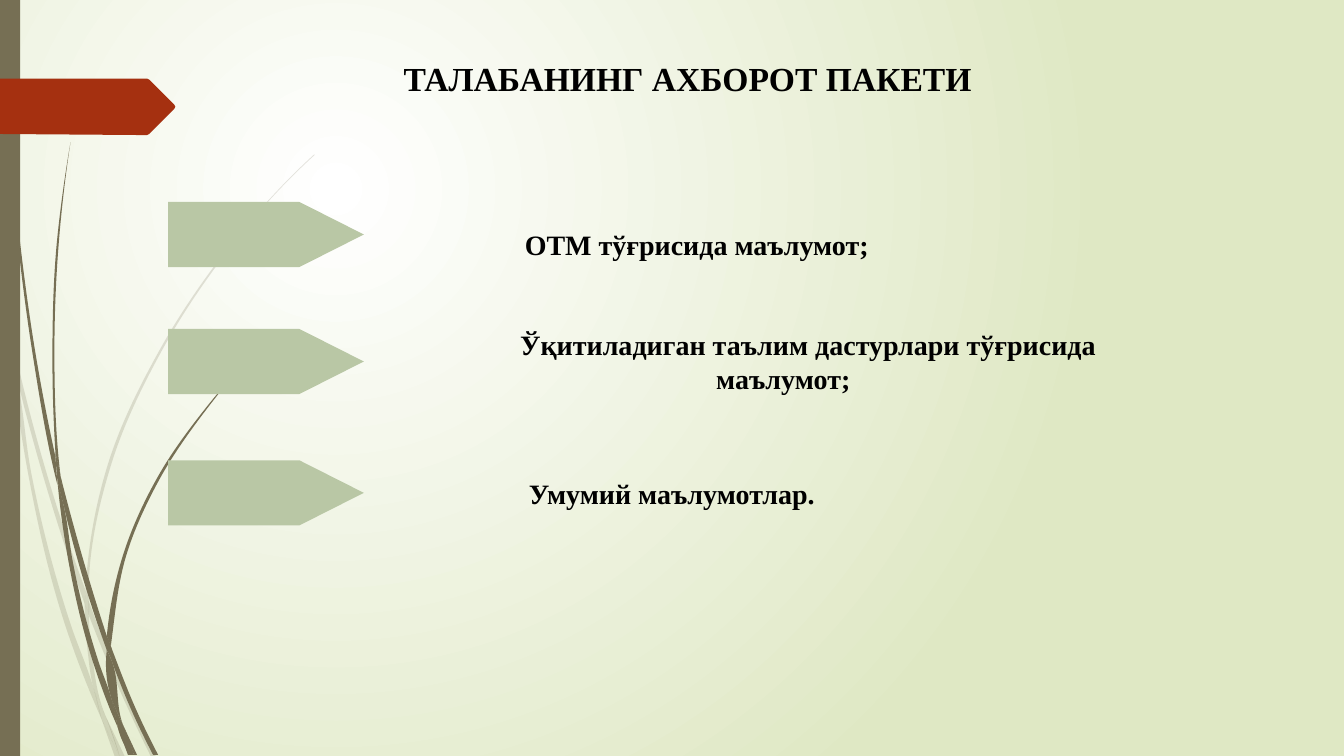
"""Build the slide about the student's information package."""
from math import dist

from lxml import etree
from pptx import Presentation
from pptx.dml.color import RGBColor
from pptx.enum.shapes import MSO_SHAPE
from pptx.enum.text import MSO_AUTO_SIZE, PP_ALIGN
from pptx.oxml.ns import qn
from pptx.util import Cm, Pt

RECTANGLE = MSO_SHAPE.RECTANGLE
ARROW = MSO_SHAPE.PENTAGON
CENTER = PP_ALIGN.CENTER
GROW = MSO_AUTO_SIZE.SHAPE_TO_FIT_TEXT

STEM, BANNER, SAGE = "766F54", "A53010", "B9C7A5"
BLACK, WHITE, PALE_GREEN = "000000", "FFFFFF", "DFE8C4"
FONT = "Times New Roman"
GRID = 0.0254

TEXTS = [
    ("ТАЛАБАНИНГ АХБОРОТ ПАКЕТИ ", (8.33, 1.34, 18.21, 1.27), {"size": 24}),
    ("ОТМ тўғрисида маълумот;", (11.68, 5.49, 10.52, 1.24),
     {"indent": 1.25, "spacing": 1.15, "wrap": False}),
    ("Ўқитиладиган таълим дастурлари тўғрисида маълумот;",
     (10.74, 8.13, 18, 1.96), {"indent": 1.25}),
    ("Умумий маълумотлар.", (9.93, 11.82, 14, 1.17),
     {"spacing": 1.07, "after": 8}),
]
ARROW_LEFT, ARROW_WIDTH, ARROW_HEIGHT = 4.24, 4.93, 1.64
ARROW_TOPS = [5.09, 8.29, 11.6]

FAINT_BLADES = [
    ([(0, 282), (9, 322), (11, 350)], [(10, 344), (0, 299)]),
    ([(14, 345), (62, 520), (85, 586)], [(84, 599), (58, 522), (17, 376)]),
    ([(88, 596), (92, 607), (127, 692), (155, 751)],
     [(150, 751), (123, 694), (88, 610)]),
    ([(105, 711), (124, 751)], [(119, 751)]),
    ([(11, 350), (17, 376), (31, 469), (70, 619), (93, 683), (101, 714)],
     [(92, 693), (65, 621), (28, 470), (11, 350)]),
    ([(84, 599), (88, 608)], [(88, 610), (91, 646), (103, 706), (105, 711)],
     [(96, 692), (93, 683), (87, 646), (84, 599)]),
    ([(312, 153), (289, 175), (268, 197), (228, 244), (158, 348), (107, 461),
      (85, 584)],
     [(88, 596), (88, 584), (110, 462), (160, 349), (229, 245), (268, 198),
      (290, 175), (312, 154)]),
    ([(101, 714), (119, 751)], [(114, 751)]),
    ([(85, 586), (88, 596), (88, 610)], [(88, 608), (84, 599)]),
    ([(93, 683), (96, 692), (105, 711), (119, 751)], [(101, 714), (99, 707)]),
]
DARK_BLADES = [
    ([(4, 0), (5, 48), (8, 109), (19, 232), (36, 355), (55, 453)],
     [(57, 481), (56, 477), (33, 355), (17, 233), (7, 110), (4, 48), (3, 0)]),
    ([(60, 472), (93, 590), (106, 631)], [(106, 645), (88, 592), (64, 505)]),
    ([(110, 641), (113, 649), (136, 706), (157, 749)],
     [(152, 749), (132, 708), (111, 656)]),
    ([(57, 477), (64, 505), (72, 556), (98, 657), (110, 691), (117, 722)],
     [(111, 708), (93, 659), (68, 557), (57, 477)]),
    ([(70, 141), (63, 193), (58, 245), (54, 349), (58, 453), (60, 472)],
     [(55, 449), (52, 349), (56, 245), (62, 193), (70, 141)]),
    ([(122, 719), (136, 749)], [(133, 749)]),
    ([(55, 449), (60, 472), (64, 505)], [(57, 477), (55, 453)]),
    ([(260, 344), (245, 358), (231, 373), (204, 405), (156, 474), (122, 551),
      (106, 631)],
     [(110, 641), (111, 633), (125, 552), (158, 476), (205, 406), (231, 374),
      (245, 359), (261, 344)]),
    ([(117, 722), (131, 749)], [(127, 749)]),
    ([(106, 645), (111, 656), (121, 716), (122, 719)],
     [(116, 706), (110, 691), (106, 645)]),
    ([(106, 631), (110, 641), (111, 656)], [(109, 651), (106, 645)]),
    ([(110, 691), (116, 706), (122, 719), (133, 749)],
     [(130, 749), (117, 722), (116, 717)]),
]
BANNER_CORNERS = [(0, 78), (146, 78), (148, 79), (173, 104), (174, 106),
                  (173, 108), (148, 133), (146, 134), (136, 134), (0, 133)]


def set_color(fill, color, alpha=None):
    """Make a fill solid in a hex colour, with an optional opacity percent."""
    fill.solid()
    fill.fore_color.rgb = RGBColor.from_string(color)
    if alpha is not None:
        element = fill._xPr.find(".//" + qn("a:srgbClr"))
        etree.SubElement(element, qn("a:alpha"), val=str(alpha * 1000))


def finish(shape, color, alpha=None):
    """Give a shape its fill and take away its line and shadow."""
    set_color(shape.fill, color, alpha)
    shape.line.fill.background()
    shape.shadow.inherit = False


def edge_handles(knots):
    """Return None for the first knot, then two curve handles per segment."""
    if len(knots) < 3:
        return [None] * len(knots)
    lengths = [dist(a, b) for a, b in zip(knots, knots[1:])]
    units = [((b[0] - a[0]) / length, (b[1] - a[1]) / length)
             for a, b, length in zip(knots, knots[1:], lengths)]
    tangents = []
    for u, v, m, n in zip(units, units[1:], lengths, lengths[1:]):
        tangents.append([(p * n + q * m) / (m + n) for p, q in zip(u, v)])
    first, last = [[2 * p - q for p, q in zip(unit, tangent)]
                   for unit, tangent in ((units[0], tangents[0]),
                                         (units[-1], tangents[-1]))]
    tangents = [first, *tangents, last]
    handles = [None]
    for i, length in enumerate(lengths):
        handles.append([
            [p + t * length / 3 for p, t in zip(knots[i], tangents[i])],
            [p - t * length / 3 for p, t in zip(knots[i + 1], tangents[i + 1])],
        ])
    return handles


def add_outline(slide, edges, color, alpha=None):
    """Draw a closed outline made of smooth edges."""
    points = [(Cm(x * GRID), Cm(y * GRID)) for edge in edges for x, y in edge]
    handles = [pair for edge in edges for pair in edge_handles(edge)]
    builder = slide.shapes.build_freeform(*points[0])
    builder.add_line_segments(points[1:], close=True)
    shape = builder.convert_to_shape()
    segments = list(shape._element.iter(qn("a:lnTo")))
    for segment, pair in zip(segments, handles[1:]):
        if pair:
            segment.tag = qn("a:cubicBezTo")
            for index, (x, y) in enumerate(pair):
                point = etree.Element(qn("a:pt"), x=str(Cm(x * GRID) - shape.left),
                                      y=str(Cm(y * GRID) - shape.top))
                segment.insert(index, point)
    finish(shape, color, alpha)


def add_preset(slide, kind, box, color):
    """Draw a preset shape and return it."""
    shape = slide.shapes.add_shape(kind, *map(Cm, box))
    finish(shape, color)
    return shape


def add_text(slide, text, box, size=20, indent=0, spacing=None, after=None,
             wrap=True):
    """Add a centred bold text box."""
    frame = slide.shapes.add_textbox(*map(Cm, box)).text_frame
    frame.word_wrap = wrap
    frame.auto_size = GROW
    paragraph = frame.paragraphs[0]
    paragraph.alignment = CENTER
    if indent:
        paragraph._p.get_or_add_pPr().set("indent", str(Cm(indent)))
    if spacing:
        paragraph.line_spacing = spacing
    if after:
        paragraph.space_after = Pt(after)
    run = paragraph.add_run()
    run.text = text
    run.font.name, run.font.size, run.font.bold = FONT, Pt(size), True
    set_color(run.font.fill, BLACK)


def set_background(slide):
    """Fill the background with a circular gradient."""
    fill = slide.background.fill
    fill.gradient()
    for stop, color, position in zip(fill.gradient_stops,
                                     (WHITE, PALE_GREEN), (0, 1)):
        stop.color.rgb = RGBColor.from_string(color)
        stop.position = position
    gradient = next(slide.element.iter(qn("a:gradFill")))
    gradient.remove(gradient.find(qn("a:lin")))
    circle = etree.SubElement(gradient, qn("a:path"), path="circle")
    etree.SubElement(circle, qn("a:fillToRect"),
                     l="50000", t="50000", r="100000", b="100000")


def main():
    """Build and save the presentation."""
    presentation = Presentation()
    presentation.slide_width, presentation.slide_height = Cm(33.87), Cm(19.05)
    slide = presentation.slides.add_slide(presentation.slide_layouts[6])
    set_background(slide)
    for blades, alpha in ((FAINT_BLADES, 20), (DARK_BLADES, None)):
        for edges in blades:
            add_outline(slide, edges, STEM, alpha)
    add_preset(slide, RECTANGLE, (0, 0, 0.51, 19.05), STEM)
    add_outline(slide, [[corner] for corner in BANNER_CORNERS], BANNER)
    for text, box, style in TEXTS:
        add_text(slide, text, box, **style)
    for top in ARROW_TOPS:
        box = (ARROW_LEFT, top, ARROW_WIDTH, ARROW_HEIGHT)
        add_preset(slide, ARROW, box, SAGE).adjustments[0] = 0.99
    presentation.save("out.pptx")


if __name__ == "__main__":
    main()
